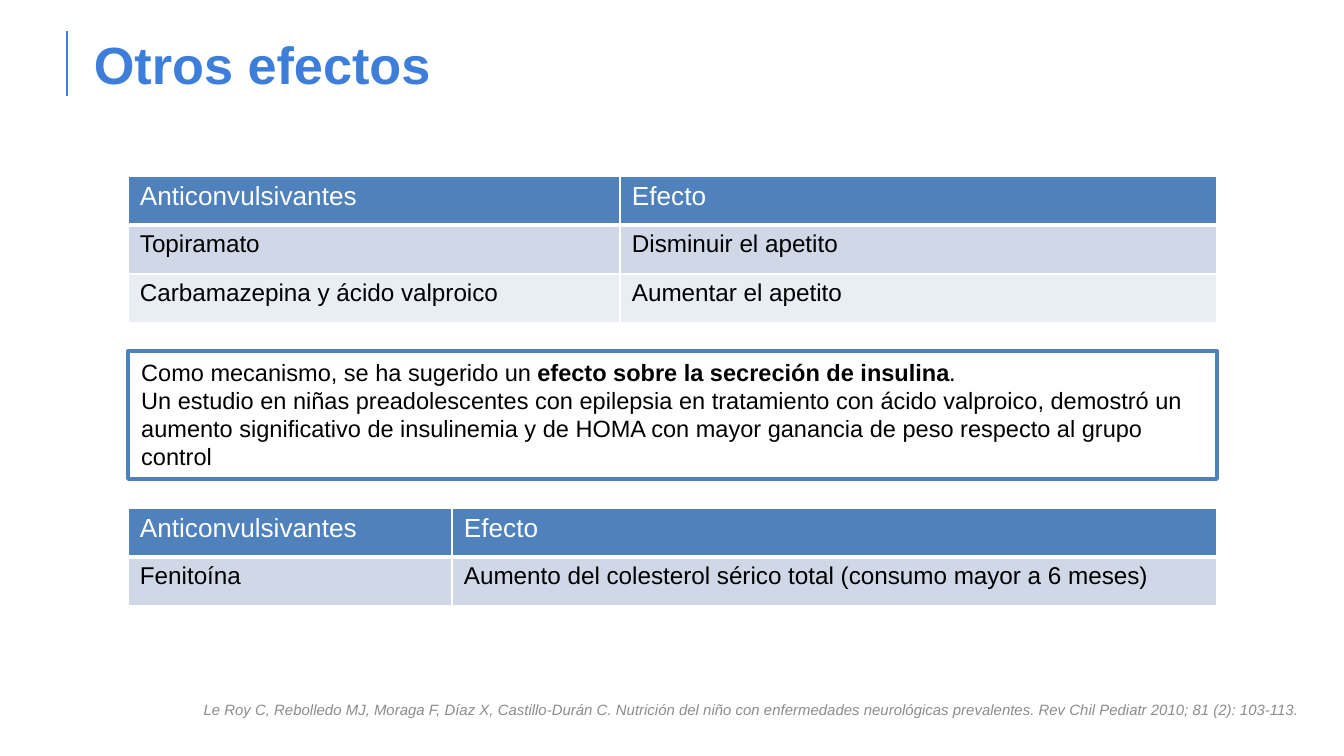
from lxml import etree
from pptx import Presentation
from pptx.dml.color import RGBColor
from pptx.enum.shapes import MSO_CONNECTOR, MSO_SHAPE
from pptx.enum.text import MSO_ANCHOR, PP_ALIGN
from pptx.oxml.ns import qn
from pptx.util import Emu, Pt

LINE, RECT = MSO_CONNECTOR.STRAIGHT, MSO_SHAPE.RECTANGLE
TOP, MIDDLE = MSO_ANCHOR.TOP, MSO_ANCHOR.MIDDLE
LEFT, RIGHT = PP_ALIGN.LEFT, PP_ALIGN.RIGHT

SCALE = 914400 / 134.4
FONT = "Arial"
BLUE = RGBColor(0x3D, 0x7E, 0xDB)
STEEL = RGBColor(0x4F, 0x81, 0xBD)
BANDS = RGBColor(0xD0, 0xD8, 0xE8), RGBColor(0xE9, 0xED, 0xF4)
GREY = RGBColor(0x8C, 0x8C, 0x8C)
WHITE = RGBColor(0xFF, 0xFF, 0xFF)
BLACK = RGBColor(0x00, 0x00, 0x00)

EDGE, WIDTH, ROW = 128, 1089, 49
HEAD = ("Anticonvulsivantes", "Efecto")


def px(n):
    """Turn px into EMU."""
    return Emu(round(n * SCALE))


def write(frame, paras, size, color, align=LEFT, italic=False):
    """Fill a text frame with paragraphs of (text, bold) runs."""
    frame.word_wrap = True
    for i, runs in enumerate(paras):
        para = frame.add_paragraph() if i else frame.paragraphs[0]
        para.alignment = align
        for text, bold in runs:
            run = para.add_run()
            run.text = text
            font = run.font
            font.name, font.size = FONT, Pt(size)
            font.bold, font.italic = bold, italic
            font.color.rgb = color


def add_rule(slide, x, top, end):
    """Draw the upright rule beside the title."""
    rule = slide.shapes.add_connector(LINE, px(x), px(top), px(x), px(end))
    rule.line.color.rgb = BLUE
    rule.line.width = Pt(1)
    etree.SubElement(rule._element.spPr, qn("a:effectLst"))


def add_title(slide, text):
    """Add the slide title."""
    frame = slide.shapes.add_textbox(px(67), px(31), px(1210), px(66)).text_frame
    frame.margin_left, frame.margin_right = px(27), px(13)
    frame.margin_top = frame.margin_bottom = px(16)
    frame.vertical_anchor = MIDDLE
    write(frame, [[(text, True)]], 28, BLUE)


def set_edges(cell, foot):
    """Give a cell white borders, with its own width at the foot."""
    props = cell._tc.get_or_add_tcPr()
    for i, (tag, width) in enumerate(
        [("a:lnL", 1), ("a:lnR", 1), ("a:lnT", 1), ("a:lnB", foot)]
    ):
        edge = etree.Element(qn(tag), w=str(Pt(width)))
        fill = etree.SubElement(edge, qn("a:solidFill"))
        etree.SubElement(fill, qn("a:srgbClr"), val=str(WHITE))
        props.insert(i, edge)


def add_grid(slide, top, split, rows):
    """Add a two-column table with a header and banded rows."""
    rows = [HEAD, *rows]
    grid = slide.shapes.add_table(
        len(rows), 2, px(EDGE), px(top), px(WIDTH), px(ROW * len(rows))
    ).table
    for col, width in zip(grid.columns, (split, WIDTH - split)):
        col.width = px(width)
    for r, texts in enumerate(rows):
        grid.rows[r].height = px(ROW)
        for c, text in enumerate(texts):
            cell = grid.cell(r, c)
            cell.margin_left = cell.margin_right = px(12)
            cell.margin_top = cell.margin_bottom = px(6)
            cell.fill.solid()
            cell.fill.fore_color.rgb = BANDS[(r - 1) % 2] if r else STEEL
            set_edges(cell, 1 if r else 3)
            write(cell.text_frame, [[(text, False)]],
                  13 if r else 14, BLACK if r else WHITE)


def add_box(slide, top, height, paras):
    """Add the framed note."""
    box = slide.shapes.add_shape(RECT, px(EDGE), px(top), px(WIDTH), px(height))
    box.shadow.inherit = False
    box.fill.solid()
    box.fill.fore_color.rgb = WHITE
    box.line.color.rgb = STEEL
    box.line.width = Pt(2)
    box.text_frame.vertical_anchor = TOP
    write(box.text_frame, paras, 12.6, BLACK)


def add_cite(slide, text):
    """Add the reference at the foot."""
    cite = slide.shapes.add_textbox(px(146), px(694), px(1168), px(32))
    write(cite.text_frame, [[(text, False)]], 8, GREY, RIGHT, True)


def main():
    """Build and save the slide."""
    deck = Presentation()
    deck.slide_width, deck.slide_height = px(1344), px(756)
    slide = deck.slides.add_slide(deck.slide_layouts[6])
    add_rule(slide, 67, 31, 96)
    add_title(slide, "Otros efectos")
    add_grid(slide, 176, 492, [
        ("Topiramato", "Disminuir el apetito"),
        ("Carbamazepina y ácido valproico", "Aumentar el apetito"),
    ])
    add_grid(slide, 508, 324, [
        ("Fenitoína",
         "Aumento del colesterol sérico total (consumo mayor a 6 meses)"),
    ])
    add_box(slide, 351, 128, [
        [("Como mecanismo, se ha sugerido un ", False),
         ("efecto sobre la secreción de insulina", True),
         (".", False)],
        [("Un estudio en niñas preadolescentes con epilepsia en tratamiento "
          "con ácido valproico, demostró un aumento significativo de "
          "insulinemia y de HOMA con mayor ganancia de peso respecto al "
          "grupo control", False)],
    ])
    add_cite(slide, "Le Roy C, Rebolledo MJ, Moraga F, Díaz X, "
             "Castillo-Durán C. Nutrición del niño con enfermedades "
             "neurológicas prevalentes. Rev Chil Pediatr 2010; "
             "81 (2): 103-113.")
    deck.save("out.pptx")


if __name__ == "__main__":
    main()
